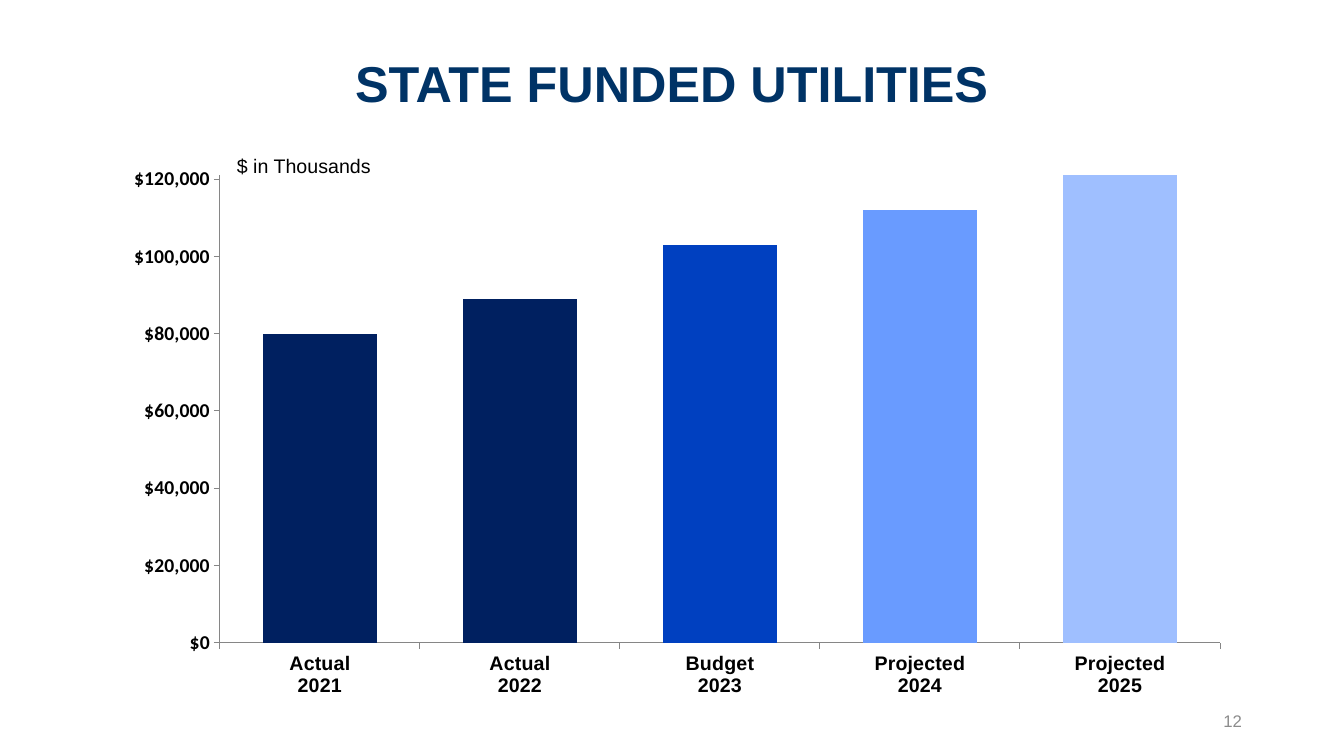
from lxml import etree
from pptx import Presentation
from pptx.chart.data import CategoryChartData
from pptx.dml.color import RGBColor
from pptx.enum.chart import XL_CHART_TYPE as ChartType, XL_TICK_MARK as Tick
from pptx.enum.text import MSO_ANCHOR as Anchor, PP_ALIGN as Align
from pptx.oxml.ns import qn
from pptx.util import Cm, Pt

YEARS = [
    ("Actual\n2021", 80000, "002060"),
    ("Actual\n2022", 89000, "002060"),
    ("Budget\n2023", 103000, "0040C0"),
    ("Projected\n2024", 112000, "699BFF"),
    ("Projected\n2025", 121000, "9FBFFF"),
]


def rgb(hex_color):
    return RGBColor.from_string(hex_color)


def set_font(font, size, color, name="Arial", bold=False):
    font.name = name
    font.size = Pt(size)
    font.bold = bold
    font.color.rgb = rgb(color)


def add_title(s, text, left, top, width, height):
    title = s.shapes.title
    title.left, title.top = Cm(left), Cm(top)
    title.width, title.height = Cm(width), Cm(height)
    tf = title.text_frame
    tf.text = text
    tf.vertical_anchor = Anchor.MIDDLE
    p = tf.paragraphs[0]
    p.alignment = Align.CENTER
    p.line_spacing = 0.9
    set_font(p.font, 36, "003366", bold=True)


def add_label(s, text, left, top, width, height, size, color,
              align=Align.LEFT, anchor=Anchor.TOP):
    tf = s.shapes.add_textbox(Cm(left), Cm(top), Cm(width), Cm(height)).text_frame
    tf.word_wrap = True
    tf.vertical_anchor = anchor
    p = tf.paragraphs[0]
    p.text = text
    p.alignment = align
    set_font(p.font, size, color)


def set_plot_area(chart, x, y, w, h):
    plot_area = chart.plots[0]._element.getparent()
    for old in plot_area.findall(qn("c:layout")):
        plot_area.remove(old)
    layout = etree.Element(qn("c:layout"))
    plot_area.insert(0, layout)
    manual = etree.SubElement(layout, qn("c:manualLayout"))
    settings = [("layoutTarget", "inner"), ("xMode", "edge"), ("yMode", "edge"),
                ("x", x), ("y", y), ("w", w), ("h", h)]
    for tag, value in settings:
        etree.SubElement(manual, qn(f"c:{tag}")).set("val", str(value))


def style_axis(axis, font_name):
    axis.has_major_gridlines = False
    axis.major_tick_mark = Tick.OUTSIDE
    axis.minor_tick_mark = Tick.NONE
    axis.format.line.color.rgb = rgb("868686")
    axis.format.line.width = Pt(0.75)
    set_font(axis.tick_labels.font, 14, "000000", font_name, bold=True)


def add_utilities_chart(s, left, top, width, height):
    data = CategoryChartData()
    data.categories = [year for year, _, _ in YEARS]
    data.add_series("Series 1", [value for _, value, _ in YEARS])
    chart = s.shapes.add_chart(ChartType.COLUMN_STACKED, Cm(left), Cm(top),
                               Cm(width), Cm(height), data).chart
    chart.has_legend = False
    chart.has_title = False
    set_font(chart.font, 18, "000000")
    set_plot_area(chart, 0.084, 0.024, 0.916, 0.869)

    plot = chart.plots[0]
    plot.gap_width = 75
    plot.overlap = 100
    plot.vary_by_categories = False
    series = plot.series[0]
    for i, (_, _, color) in enumerate(YEARS):
        fill = series.points[i].format.fill
        fill.solid()
        fill.fore_color.rgb = rgb(color)

    style_axis(chart.category_axis, "Arial")
    axis = chart.value_axis
    style_axis(axis, "Calibri")
    axis.minimum_scale = 0
    axis.maximum_scale = 121000
    axis.major_unit = 20000
    axis.tick_labels.number_format = '"$"#,##0'
    axis.tick_labels.number_format_is_linked = False


def build_slide(prs):
    s = prs.slides.add_slide(prs.slide_layouts[5])
    add_title(s, "STATE FUNDED UTILITIES", 2.33, 0.61, 29.21, 3.1)
    add_utilities_chart(s, 3.23, 4.09, 27.53, 13.56)
    add_label(s, "$ in Thousands", 5.72, 3.76, 4.7, 0.86, 14, "000000")
    add_label(s, "12", 23.93, 17.65, 7.62, 1.02, 12, "8C8C8C",
              Align.RIGHT, Anchor.MIDDLE)


def main():
    prs = Presentation()
    prs.slide_width, prs.slide_height = Cm(33.87), Cm(19.05)
    build_slide(prs)
    prs.save("out.pptx")


if __name__ == "__main__":
    main()
